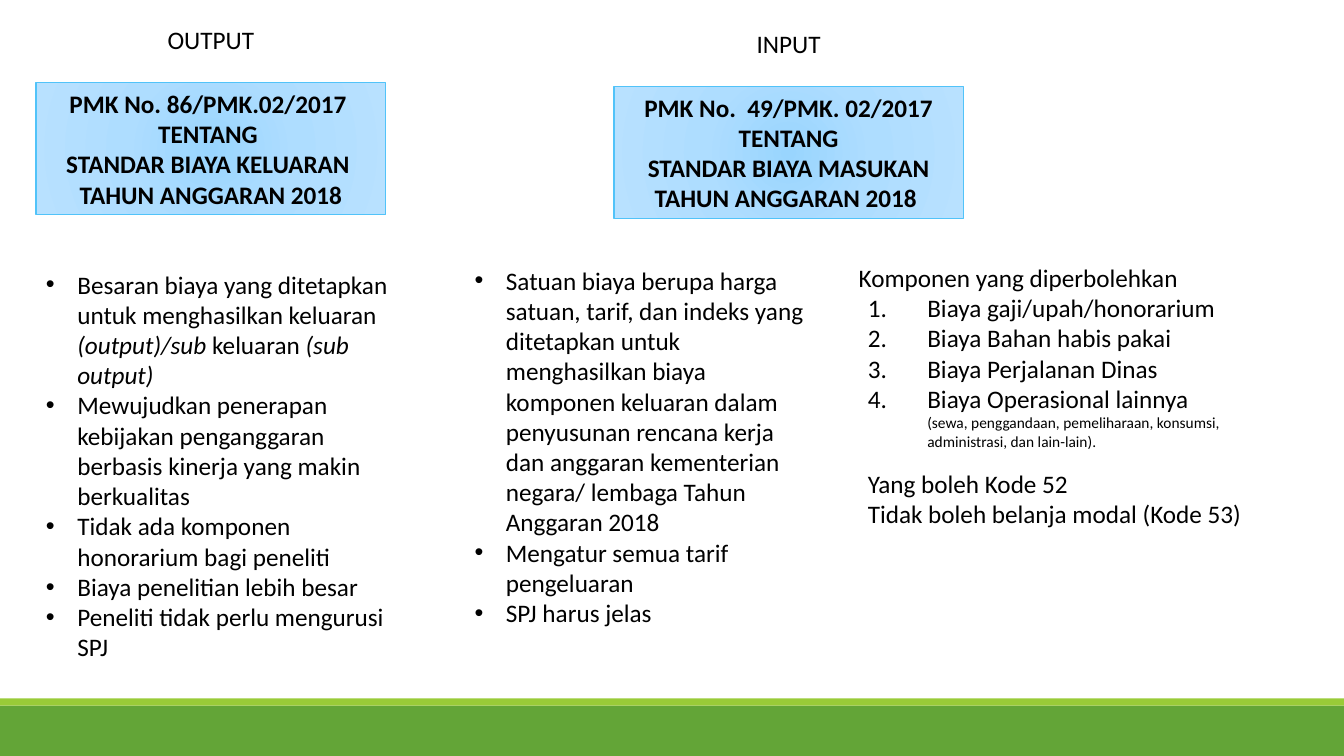
from lxml import etree
from pptx import Presentation
from pptx.dml.color import RGBColor
from pptx.enum import shapes, text
from pptx.oxml import parse_xml
from pptx.oxml.ns import nsdecls, qn
from pptx.util import Cm, Pt

BLACK = RGBColor(0x00, 0x00, 0x00)
GREEN = RGBColor(0x63, 0xA5, 0x37)
LIME = RGBColor(0x99, 0xCB, 0x38)
SKY = RGBColor(0x51, 0xC3, 0xF9)
HEADER_STOPS = [(0, RGBColor(0x99, 0xD5, 0xFE)),
                (45, RGBColor(0xAE, 0xDD, 0xFF)),
                (100, RGBColor(0xB8, 0xE1, 0xFF))]

SLIDE_W, SLIDE_H = 33.87, 19.05
HEADER_W, HEADER_H = 8.81, 3.33

OUTPUT_POINTS = [
    [("Besaran biaya yang ditetapkan untuk menghasilkan keluaran ", False),
     ("(output)/sub ", True), ("keluaran ", False), ("(sub output)", True)],
    [("Mewujudkan penerapan kebijakan penganggaran berbasis kinerja "
      "yang makin berkualitas", False)],
    [("Tidak ada komponen honorarium bagi peneliti", False)],
    [("Biaya penelitian lebih besar", False)],
    [("Peneliti tidak perlu mengurusi SPJ", False)],
]
INPUT_POINTS = [
    [("Satuan biaya berupa harga satuan, tarif, dan indeks yang ditetapkan "
      "untuk menghasilkan biaya komponen keluaran dalam penyusunan rencana "
      "kerja dan anggaran kementerian negara/ lembaga Tahun Anggaran 2018",
      False)],
    [("Mengatur semua tarif pengeluaran", False)],
    [("SPJ harus jelas", False)],
]
COMPONENTS = ["Biaya gaji/upah/honorarium", "Biaya Bahan habis pakai",
              "Biaya Perjalanan Dinas", "Biaya Operasional lainnya"]


def add_bar(slide, top, height, color):
    sp = slide.shapes.add_shape(shapes.MSO_SHAPE.RECTANGLE, Cm(0), Cm(top),
                                Cm(SLIDE_W), Cm(height))
    sp.shadow.inherit = False
    sp.fill.solid()
    sp.fill.fore_color.rgb = color
    sp.line.fill.background()


def add_box(slide, left, top, width, height):
    tf = slide.shapes.add_textbox(Cm(left), Cm(top), Cm(width),
                                  Cm(height)).text_frame
    tf.word_wrap = True
    return tf


def add_paragraph(tf, first, runs, size=18, bold=False, align=None):
    p = tf.paragraphs[0] if first else tf.add_paragraph()
    p.alignment = align
    for words, italic in runs:
        r = p.add_run()
        r.text = words
        r.font.name, r.font.size = "Calibri", Pt(size)
        r.font.bold, r.font.italic = bold, italic
        r.font.color.rgb = BLACK
    return p


def indent(p, margin, hanging=0, bullet=None, numbered=False):
    pPr = p._p.get_or_add_pPr()
    pPr.set("marL", str(Cm(margin)))
    pPr.set("indent", str(-Cm(hanging)))
    if numbered:
        etree.SubElement(pPr, qn("a:buFont"), typeface="+mj-lt")
        etree.SubElement(pPr, qn("a:buAutoNum"), type="arabicPeriod")
    elif bullet:
        etree.SubElement(pPr, qn("a:buFont"), typeface="Arial")
        etree.SubElement(pPr, qn("a:buChar"), char=bullet)


def fill_radial(sp, stops):
    sp.fill.gradient()
    grad = sp._element.spPr.find(qn("a:gradFill"))
    gs = "".join(f'<a:gs pos="{pos * 1000}"><a:srgbClr val="{color}"/></a:gs>'
                 for pos, color in stops)
    grad.getparent().replace(grad, parse_xml(
        f'<a:gradFill {nsdecls("a")} rotWithShape="1"><a:gsLst>{gs}</a:gsLst>'
        '<a:path path="circle"><a:fillToRect l="100000" t="100000" '
        'r="100000" b="100000"/></a:path></a:gradFill>'))


def add_header(slide, left, top, title, lines):
    # Title above the box
    tf = add_box(slide, left, top - 1.58, HEADER_W, 1.02)
    add_paragraph(tf, True, [(title, False)], align=text.PP_ALIGN.CENTER)
    # Regulation box
    sp = slide.shapes.add_shape(shapes.MSO_SHAPE.RECTANGLE, Cm(left), Cm(top),
                                Cm(HEADER_W), Cm(HEADER_H))
    sp.shadow.inherit = False
    fill_radial(sp, HEADER_STOPS)
    sp.line.color.rgb = SKY
    sp.line.width = Pt(1)
    tf = sp.text_frame
    tf.word_wrap = True
    tf.vertical_anchor = text.MSO_ANCHOR.MIDDLE
    for i, line in enumerate(lines):
        add_paragraph(tf, i == 0, [(line, False)], bold=True,
                      align=text.PP_ALIGN.CENTER)


def add_points(slide, left, top, width, height, points):
    tf = add_box(slide, left, top, width, height)
    for i, runs in enumerate(points):
        indent(add_paragraph(tf, i == 0, runs), 0.79, 0.79, bullet="•")


def add_components(slide, left, top, width, height):
    tf = add_box(slide, left, top, width, height)
    add_paragraph(tf, True, [("Komponen yang diperbolehkan", False)])
    for item in COMPONENTS:
        p = add_paragraph(tf, False, [(item, False)])
        indent(p, 1.73, 1.5, numbered=True)
    note = ("(sewa, penggandaan, pemeliharaan, konsumsi, "
            "administrasi, dan lain-lain).")
    indent(add_paragraph(tf, False, [(note, False)], size=11), 1.73)
    # Spending codes
    for line, gap in [("Yang boleh Kode 52", 13),
                      ("Tidak boleh belanja modal (Kode 53)", 0)]:
        p = add_paragraph(tf, False, [(line, False)])
        p.space_before = Pt(gap)
        indent(p, 0.23)


def main():
    prs = Presentation()
    prs.slide_width, prs.slide_height = Cm(SLIDE_W), Cm(SLIDE_H)
    slide = prs.slides.add_slide(prs.slide_layouts[6])

    # Footer bars
    add_bar(slide, 17.78, 1.27, GREEN)
    add_bar(slide, 17.6, 0.18, LIME)

    # Output column
    add_header(slide, 0.91, 2.08, "OUTPUT",
               ["PMK No. 86/PMK.02/2017 ", "TENTANG ",
                "STANDAR BIAYA KELUARAN ", "TAHUN ANGGARAN 2018"])
    add_points(slide, 0.91, 6.65, 9.65, 10.26, OUTPUT_POINTS)

    # Input columns
    add_header(slide, 15.47, 2.18, "INPUT",
               ["PMK No.  49/PMK. 02/2017", "TENTANG",
                "STANDAR BIAYA MASUKAN TAHUN ANGGARAN 2018 "])
    add_points(slide, 11.71, 6.55, 8.81, 9.5, INPUT_POINTS)
    add_components(slide, 21.39, 6.48, 11.07, 7.06)

    prs.save("out.pptx")


if __name__ == "__main__":
    main()
